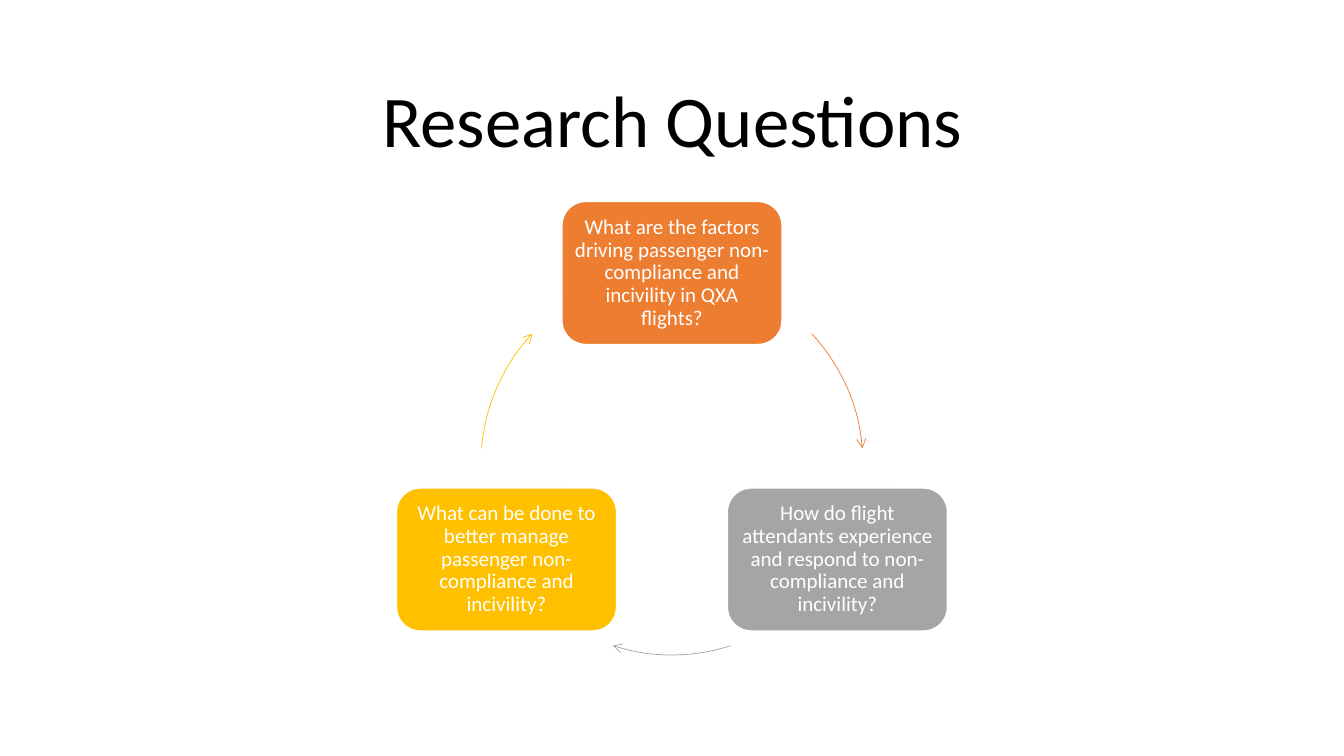
from math import cos, radians, sin

from lxml.etree import SubElement
from pptx import Presentation
from pptx.dml.color import RGBColor
from pptx.enum.shapes import MSO_SHAPE
from pptx.enum.text import MSO_ANCHOR, PP_ALIGN
from pptx.oxml.ns import qn
from pptx.util import Pt

PX = 12192000 / 1344
SLIDE_W, SLIDE_H = 1344, 756
CENTER_X, CENTER_Y, RADIUS = 672, 464, 191
BOX_W, BOX_H = 220, 143
FONT = "Calibri"
COLORS = {
    "black": "000000",
    "white": "FFFFFF",
    "orange": "ED7D31",
    "gray": "A5A5A5",
    "gold": "FFC000",
}
QUESTIONS = [
    ("What are the factors driving passenger non-compliance and incivility in QXA flights?",
     "orange", 270, (317, 355.3)),
    ("How do flight attendants experience and respond to non-compliance and incivility?",
     "gray", 30, (72, 108)),
    ("What can be done to better manage passenger non-compliance and incivility?",
     "gold", 150, (184.7, 223)),
]


def emu(px):
    """Turn a length in px into EMU."""
    return round(px * PX)


def color(name):
    """Return the named colour."""
    return RGBColor.from_string(COLORS[name])


def write_text(box, text, *, size, ink, inset):
    """Write one centred paragraph into a box."""
    frame = box.text_frame
    frame.word_wrap = True
    frame.vertical_anchor = MSO_ANCHOR.MIDDLE
    frame.margin_left = frame.margin_right = emu(inset)
    frame.margin_top = frame.margin_bottom = emu(min(inset, 6))
    para = frame.paragraphs[0]
    para.alignment = PP_ALIGN.CENTER
    para.line_spacing = 0.9
    span = para.add_run()
    span.text = text
    span.font.name = FONT
    span.font.size = Pt(size)
    span.font.color.rgb = color(ink)


def add_title(page, text):
    """Add the slide title."""
    box = page.shapes.add_textbox(emu(93), emu(61), emu(1159), emu(125))
    write_text(box, text, size=52, ink="black", inset=10)


def add_centered_shape(page, kind, x, y, width, height, *, line, weight):
    """Add an outlined shape around a centre point."""
    shape = page.shapes.add_shape(
        kind, emu(x - width / 2), emu(y - height / 2), emu(width), emu(height))
    shape.shadow.inherit = False
    shape.line.color.rgb = color(line)
    shape.line.width = Pt(weight)
    return shape


def add_question(page, text, fill, angle):
    """Add a question box at an angle on the cycle."""
    x = CENTER_X + RADIUS * cos(radians(angle))
    y = CENTER_Y + RADIUS * sin(radians(angle))
    box = add_centered_shape(page, MSO_SHAPE.ROUNDED_RECTANGLE, x, y, BOX_W, BOX_H,
                             line="white", weight=1)
    box.fill.solid()
    box.fill.fore_color.rgb = color(fill)
    write_text(box, text, size=15, ink="white", inset=6)


def add_arc_arrow(page, ink, start, end):
    """Add a clockwise arc of the cycle with an arrowhead at its end."""
    arc = add_centered_shape(page, MSO_SHAPE.ARC, CENTER_X, CENTER_Y, 2 * RADIUS, 2 * RADIUS,
                             line=ink, weight=0.5)
    arc.fill.background()
    arc.adjustments[0] = start * 0.6
    arc.adjustments[1] = end * 0.6
    outline = arc.element.spPr.find(qn("a:ln"))
    SubElement(outline, qn("a:tailEnd"), type="arrow")


def main():
    """Build the deck."""
    deck = Presentation()
    deck.slide_width, deck.slide_height = emu(SLIDE_W), emu(SLIDE_H)
    page = deck.slides.add_slide(deck.slide_layouts[6])
    add_title(page, "Research Questions")
    for text, tone, angle, sweep in QUESTIONS:
        add_question(page, text, tone, angle)
        add_arc_arrow(page, tone, *sweep)
    deck.save("out.pptx")


if __name__ == "__main__":
    main()
